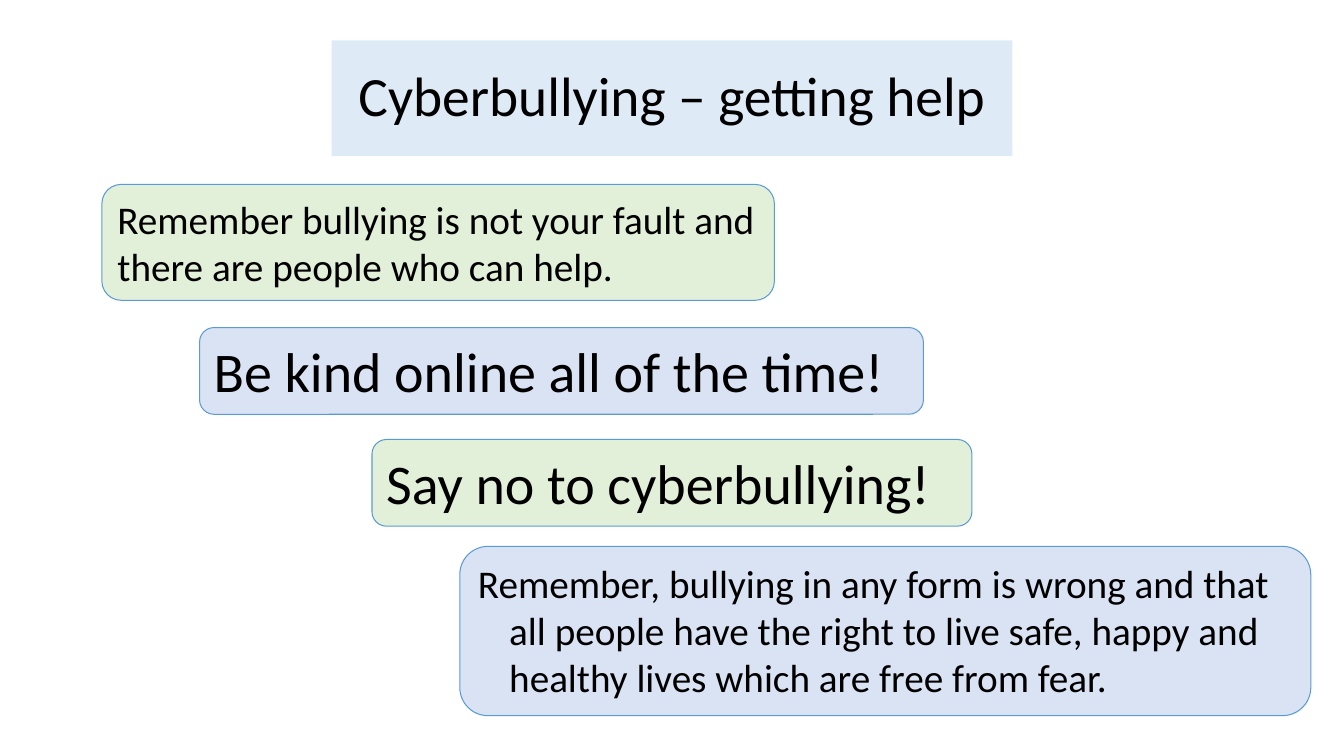
from dataclasses import dataclass
from itertools import cycle

from pptx import Presentation
from pptx.dml.color import RGBColor
from pptx.enum.shapes import MSO_SHAPE as Preset
from pptx.enum.text import MSO_ANCHOR as Anchor, MSO_AUTO_SIZE as AutoSize, PP_ALIGN as Align
from pptx.util import Emu, Inches, Pt

SLIDE_WIDTH, SLIDE_HEIGHT = Inches(13.33), Inches(7.5)
HANGING = Inches(0.31)
FONT_NAME = "Calibri"
BLACK, TITLE_BLUE, OUTLINE_BLUE = "000000", "DEEBF7", "5B9BD5"
CALLOUT_FILLS = ("E2F0D9", "DAE3F3")


@dataclass(frozen=True)
class Area:
    left: float
    top: float
    width: float
    height: float


@dataclass(frozen=True)
class Callout:
    text: str
    area: Area
    size: float
    hanging: bool = True


TITLE = Callout("Cyberbullying – getting help", Area(24.68, 5.33, 50.64, 15.33), 39.6, False)
CALLOUTS = (
    Callout("Remember bullying is not your fault and there are people who can help.",
            Area(7.58, 24.4, 50.04, 15.33), 28, False),
    Callout("Be kind online all of the time!", Area(14.85, 43.33, 53.86, 11.47), 40),
    Callout("Say no to cyberbullying!", Area(27.68, 58.13, 44.64, 11.47), 40),
    Callout("Remember, bullying in any form is wrong and that all people have the right "
            "to live safe, happy and healthy lives which are free from fear.",
            Area(34.21, 72.27, 63.32, 22.4), 28),
)


def colour(value: str) -> RGBColor:
    return RGBColor.from_string(value)


def set_values(target, values: dict) -> None:
    for name, value in values.items():
        setattr(target, name, value)


def bounds(area: Area) -> dict[str, Emu]:
    return {
        "left": Emu(round(SLIDE_WIDTH * area.left / 100)),
        "top": Emu(round(SLIDE_HEIGHT * area.top / 100)),
        "width": Emu(round(SLIDE_WIDTH * area.width / 100)),
        "height": Emu(round(SLIDE_HEIGHT * area.height / 100)),
    }


def fill_and_write(shape, callout: Callout, fill: str, frame: dict, layout: dict) -> None:
    shape.fill.solid()
    shape.fill.fore_color.rgb = colour(fill)
    shape.text_frame.text = callout.text
    set_values(shape.text_frame, {"word_wrap": True, **frame})
    paragraph = shape.text_frame.paragraphs[0]
    if callout.hanging:
        properties = paragraph._p.get_or_add_pPr()
        properties.set("marL", str(HANGING))
        properties.set("indent", str(-HANGING))
    set_values(paragraph, layout)
    font = paragraph.runs[0].font
    set_values(font, {"name": FONT_NAME, "size": Pt(callout.size)})
    font.color.rgb = colour(BLACK)


def draw_title(slide, title: Callout) -> None:
    shape = slide.shapes.title
    set_values(shape, bounds(title.area))
    fill_and_write(shape, title, TITLE_BLUE,
                   {"vertical_anchor": Anchor.MIDDLE, "auto_size": AutoSize.NONE},
                   {"alignment": Align.CENTER, "line_spacing": 0.9})


def draw_callout(slide, callout: Callout, fill: str) -> None:
    shape = slide.shapes.add_shape(Preset.ROUNDED_RECTANGLE, **bounds(callout.area))
    shape.shadow.inherit = False
    shape.line.color.rgb = colour(OUTLINE_BLUE)
    shape.line.width = Pt(0.75)
    fill_and_write(shape, callout, fill,
                   {"vertical_anchor": Anchor.TOP, "auto_size": AutoSize.SHAPE_TO_FIT_TEXT},
                   {"alignment": Align.LEFT})


def main() -> None:
    presentation = Presentation()
    set_values(presentation, {"slide_width": SLIDE_WIDTH, "slide_height": SLIDE_HEIGHT})
    slide = presentation.slides.add_slide(presentation.slide_layouts.get_by_name("Title Only"))
    draw_title(slide, TITLE)
    for callout, fill in zip(CALLOUTS, cycle(CALLOUT_FILLS)):
        draw_callout(slide, callout, fill)
    presentation.save("out.pptx")


if __name__ == "__main__":
    main()
